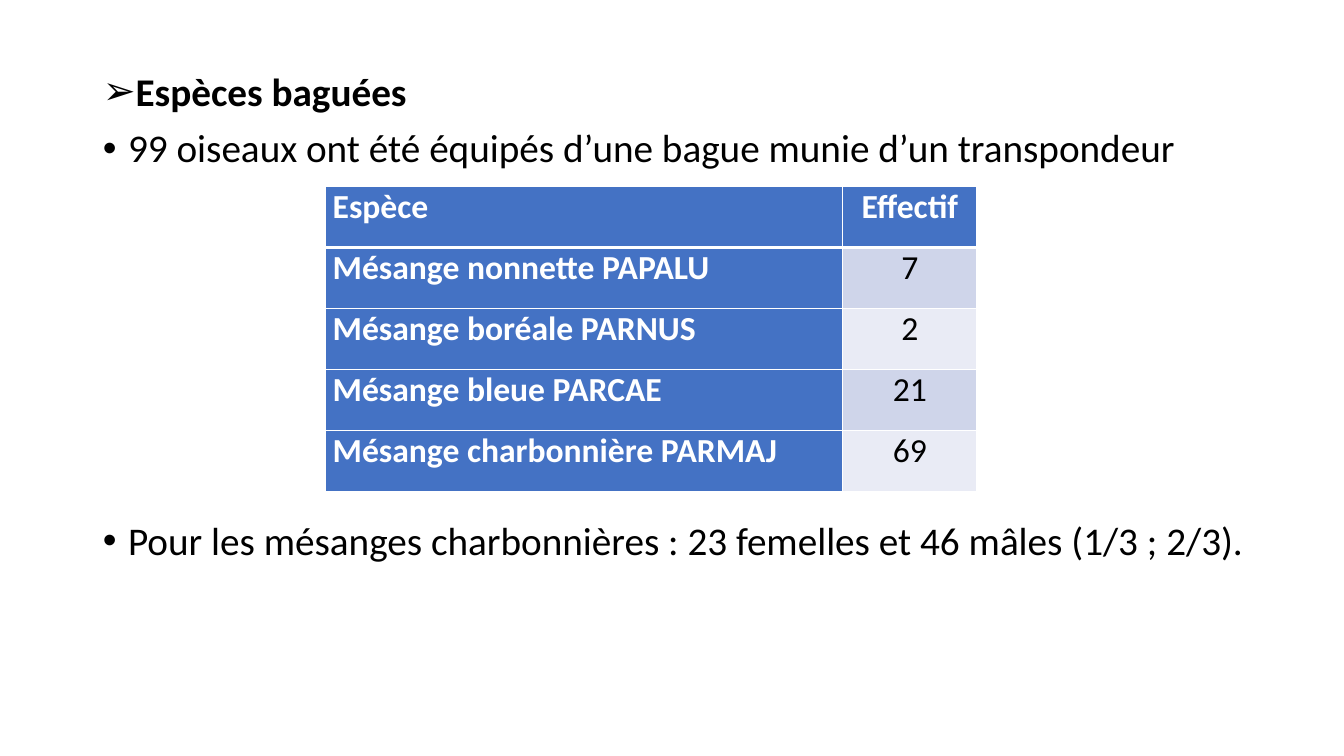
from dataclasses import dataclass

import pptx
import pptx.dml.color
import pptx.enum.text
import pptx.oxml
import pptx.oxml.ns
import pptx.util
from pptx.util import Inches, Pt


@dataclass(frozen=True)
class Theme:
    font: str = "Calibri"
    body_size: int = 28
    table_size: int = 24
    black: str = "000000"
    white: str = "FFFFFF"
    blue: str = "4472C4"
    bands: tuple = ("CFD5EA", "E9EBF5")


THEME = Theme()
ALIGN = pptx.enum.text.PP_ALIGN

# Bullet, text, bold, space before in points; the last gap leaves room for the table.
STATEMENTS = [
    ("➢", "Espèces baguées", True, 10),
    ("•", "99 oiseaux ont été équipés d’une bague munie d’un transpondeur", False, 10),
    ("•", "Pour les mésanges charbonnières : 23 femelles et 46 mâles (1/3 ; 2/3).", False, 250),
]
SPECIES_COUNTS = [
    ("Espèce", "Effectif"),
    ("Mésange nonnette PAPALU", "7"),
    ("Mésange boréale PARNUS", "2"),
    ("Mésange bleue PARCAE", "21"),
    ("Mésange charbonnière PARMAJ", "69"),
]


def rgb(value):
    return pptx.dml.color.RGBColor.from_string(value)


def xml(fragment):
    """Parse a fragment whose first tag ends in a space, adding the a: namespace."""
    return pptx.oxml.parse_xml(fragment.replace(" ", f" {pptx.oxml.ns.nsdecls('a')} ", 1))


def add_text(paragraph, text, size, colour, bold):
    run = paragraph.add_run()
    run.text = text
    run.font.name = THEME.font
    run.font.size = Pt(size)
    run.font.bold = bold
    run.font.color.rgb = rgb(colour)


def set_bullet(paragraph, symbol):
    properties = paragraph._p.get_or_add_pPr()
    properties.set("marL", str(Inches(0.25)))
    properties.set("indent", str(Inches(-0.25)))
    properties.append(xml('<a:buFont typeface="Arial"/>'))
    properties.append(xml(f'<a:buChar char="{symbol}"/>'))


def set_borders(cell, top, bottom):
    """Draw white borders; top and bottom are widths in points."""
    for side, width in (("L", 1), ("R", 1), ("T", top), ("B", bottom)):
        cell._tc.get_or_add_tcPr().append(xml(
            f'<a:ln{side} w="{Pt(width)}"><a:solidFill>'
            f'<a:srgbClr val="{THEME.white}"/></a:solidFill></a:ln{side}>'))


def fill_statements(body, left, top, width, height):
    body.left, body.top, body.width, body.height = left, top, width, height
    frame = body.text_frame
    frame.auto_size = pptx.enum.text.MSO_AUTO_SIZE.NONE
    frame.vertical_anchor = pptx.enum.text.MSO_ANCHOR.TOP
    for index, (symbol, text, bold, gap) in enumerate(STATEMENTS):
        paragraph = frame.add_paragraph() if index else frame.paragraphs[0]
        paragraph.line_spacing = 0.9
        paragraph.space_before = Pt(gap)
        set_bullet(paragraph, symbol)
        add_text(paragraph, text, THEME.body_size, THEME.black, bold)


def add_species_table(slide, left, top, width, height):
    table = slide.shapes.add_table(len(SPECIES_COUNTS), 2, left, top, width, height).table
    count_width = Inches(1.33)
    table.columns[0].width = width - count_width
    table.columns[1].width = count_width
    for row, values in enumerate(SPECIES_COUNTS):
        for column, text in enumerate(values):
            cell = table.cell(row, column)
            is_heading = row == 0 or column == 0
            cell.margin_left = cell.margin_right = Inches(0.07)
            cell.margin_top = cell.margin_bottom = 0
            set_borders(cell, 3 if row == 1 else 1, 3 if row == 0 else 1)
            cell.fill.solid()
            cell.fill.fore_color.rgb = rgb(THEME.blue if is_heading else THEME.bands[(row - 1) % 2])
            paragraph = cell.text_frame.paragraphs[0]
            paragraph.alignment = ALIGN.CENTER if column else ALIGN.LEFT
            add_text(paragraph, text, THEME.table_size,
                     THEME.white if is_heading else THEME.black, is_heading)


def main():
    deck = pptx.Presentation()
    deck.slide_width, deck.slide_height = Inches(13.33), Inches(7.5)
    slide = deck.slides.add_slide(deck.slide_layouts.get_by_name("Title and Content"))
    empty_title = slide.shapes.title.element
    empty_title.getparent().remove(empty_title)
    fill_statements(slide.placeholders[1], Inches(0.92), Inches(0.67), Inches(11.87), Inches(6.08))
    add_species_table(slide, Inches(3.23), Inches(1.85), Inches(6.46), Inches(3.03))
    deck.save("out.pptx")


if __name__ == "__main__":
    main()
